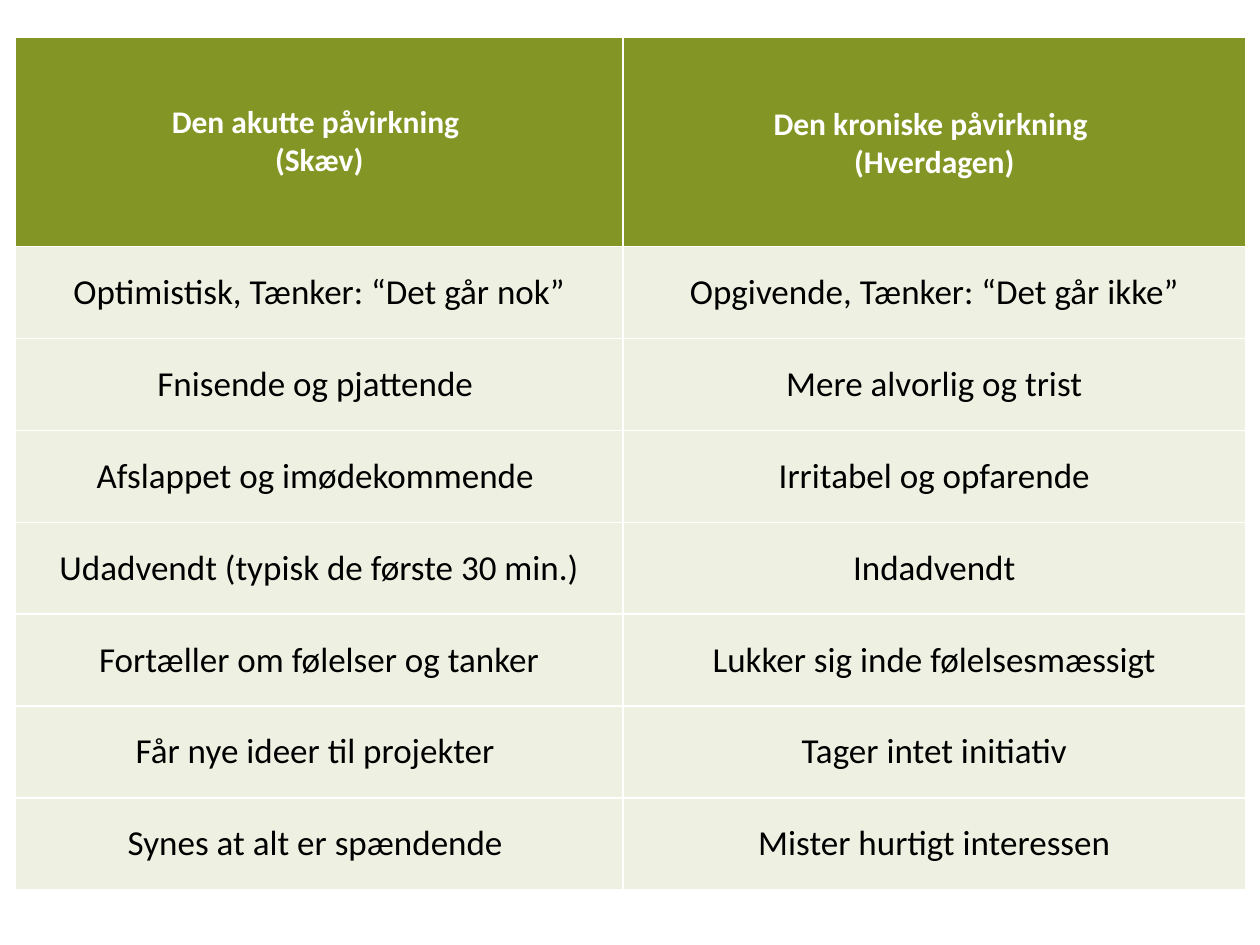
import lxml.etree
import pptx
import pptx.dml.color
import pptx.enum.text
import pptx.oxml.ns
import pptx.util

Pt = pptx.util.Pt
Anchor = pptx.enum.text.MSO_ANCHOR
qn = pptx.oxml.ns.qn

GREEN, WHITE, BLACK = "839625", "FFFFFF", "000000"
COLUMN_WIDTHS = [347, 356]
HEADER_HEIGHT = 120
# A vertical tab is a line break inside a paragraph.
HEADERS = ["Den akutte påvirkning \v(Skæv)", "Den kroniske påvirkning \n(Hverdagen)"]
HEADER_FORMATS = [
    {"anchor": Anchor.MIDDLE, "top": 17.25},
    {"anchor": Anchor.TOP, "top": 39.25},
]
EFFECTS = [
    ("Optimistisk, Tænker: “Det går nok”", "Opgivende, Tænker: “Det går ikke”"),
    ("Fnisende og pjattende ", "Mere alvorlig og trist"),
    ("Afslappet og imødekommende ", "Irritabel og opfarende"),
    ("Udadvendt (typisk de første 30 min.)", "Indadvendt"),
    ("Fortæller om følelser og tanker", "Lukker sig inde følelsesmæssigt"),
    ("Får nye ideer til projekter ", "Tager intet initiativ"),
    ("Synes at alt er spændende ", "Mister hurtigt interessen"),
]


def rgb(color):
    return pptx.dml.color.RGBColor.from_string(color)


def write_text(cell, text, size, color, bold=False, anchor=Anchor.MIDDLE, top=8.65, bottom=8.65):
    cell.margin_left = cell.margin_right = Pt(4.3)
    cell.margin_top, cell.margin_bottom = Pt(top), Pt(bottom)
    cell.vertical_anchor = anchor
    frame = cell.text_frame
    for index, line in enumerate(text.split("\n")):
        para = frame.add_paragraph() if index else frame.paragraphs[0]
        para.text = line
        para.alignment = pptx.enum.text.PP_ALIGN.CENTER
        for span in para.runs:
            span.font.name = "Calibri"
            span.font.size = Pt(size)
            span.font.bold = bold
            span.font.color.rgb = rgb(color)


def paint_cell(cell, color, opacity=100):
    cell.fill.solid()
    cell.fill.fore_color.rgb = rgb(color)
    properties = cell._tc.get_or_add_tcPr()
    if opacity < 100:
        fill_color = properties.find(qn("a:solidFill"))[0]
        lxml.etree.SubElement(fill_color, qn("a:alpha"), val=str(opacity * 1000))
    for index, side in enumerate(("lnL", "lnR", "lnT", "lnB")):
        border = lxml.etree.Element(qn("a:" + side), w=str(Pt(1)))
        border_fill = lxml.etree.SubElement(border, qn("a:solidFill"))
        lxml.etree.SubElement(border_fill, qn("a:srgbClr"), val=WHITE)
        properties.insert(index, border)


def add_comparison_table(page, left, top, width, height):
    frame = page.shapes.add_table(
        len(EFFECTS) + 1, len(HEADERS), Pt(left), Pt(top), Pt(width), Pt(height))
    table = frame.table
    table.horz_banding = False
    for column, column_width in zip(table.columns, COLUMN_WIDTHS):
        column.width = Pt(column_width)
    for row in table.rows:
        row.height = Pt((height - HEADER_HEIGHT) / len(EFFECTS))
    table.rows[0].height = Pt(HEADER_HEIGHT)

    for column, (text, style) in enumerate(zip(HEADERS, HEADER_FORMATS)):
        cell = table.cell(0, column)
        write_text(cell, text, size=18, color=WHITE, bold=True, bottom=17.25, **style)
        paint_cell(cell, GREEN)
    for row, effects in enumerate(EFFECTS, start=1):
        for column, text in enumerate(effects):
            cell = table.cell(row, column)
            write_text(cell, text, size=20, color=BLACK)
            paint_cell(cell, GREEN, opacity=13)


def main():
    deck = pptx.Presentation()
    deck.slide_width, deck.slide_height = Pt(720), Pt(540)
    page = deck.slides.add_slide(deck.slide_layouts[6])
    add_comparison_table(page, left=8.9, top=21, width=sum(COLUMN_WIDTHS), height=487.5)
    deck.save("out.pptx")


if __name__ == "__main__":
    main()
